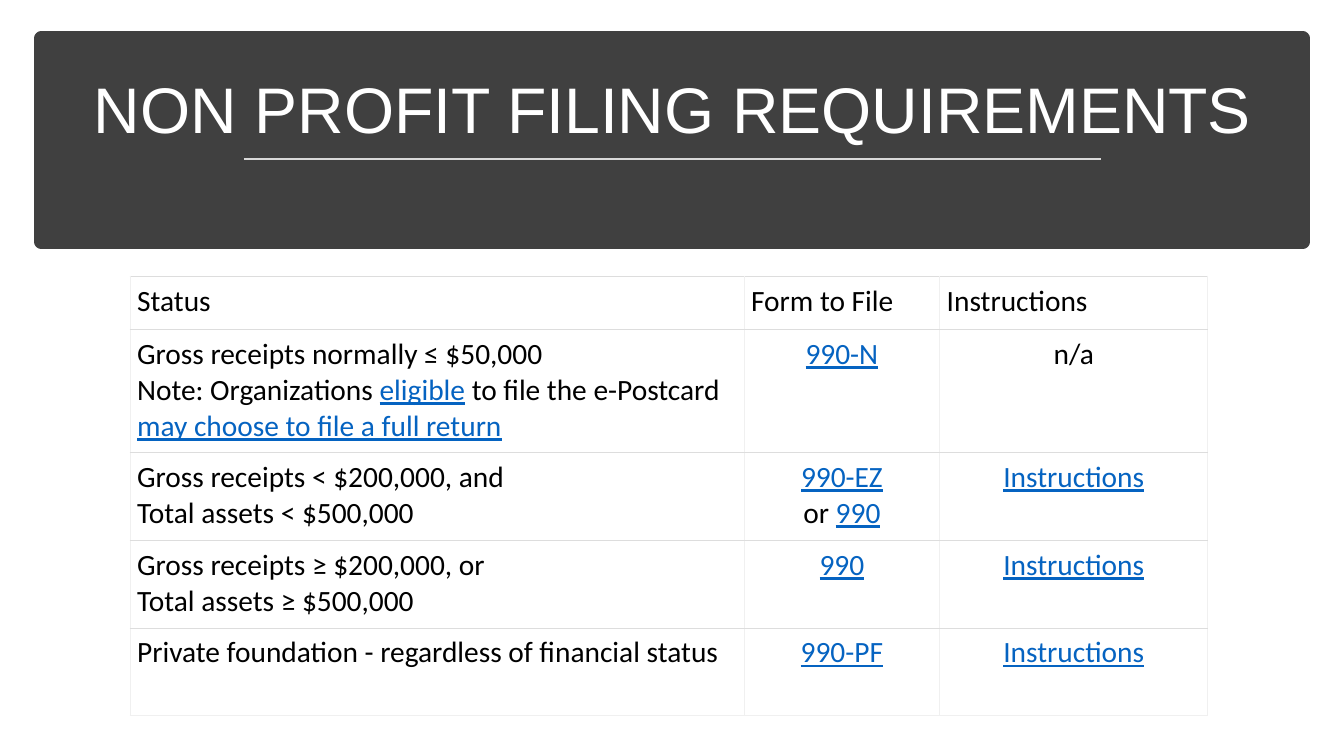
from lxml import etree
from pptx import Presentation
from pptx.dml.color import RGBColor
from pptx.enum import shapes, text
from pptx.oxml import ns
from pptx.util import Inches, Pt

CHARCOAL = RGBColor(0x40, 0x40, 0x40)
WHITE = RGBColor(0xFF, 0xFF, 0xFF)
BLACK = RGBColor(0, 0, 0)
RULE_GREY = RGBColor(0xD9, 0xD9, 0xD9)
LINK_BLUE = RGBColor(0x05, 0x63, 0xC1)
ROW_BORDER = RGBColor(0xDD, 0xDD, 0xDD)
SIDE_BORDER = RGBColor(0xF0, 0xF0, 0xF0)

COLUMN_WIDTHS = [6.09, 1.94, 2.66]
ROW_HEIGHTS = [0.53, 1.22, 0.87, 0.87, 0.87]
FILING_ROWS = [
    ["Status", "Form to File", "Instructions"],
    ["Gross receipts normally ≤ $50,000\vNote: Organizations |eligible| to file the e-Postcard |may choose to file a full return|",
     "|990-N|", "n/a"],
    ["Gross receipts < $200,000, and\vTotal assets < $500,000", "|990-EZ|\nor |990|", "|Instructions|"],
    ["Gross receipts ≥ $200,000, or\vTotal assets ≥ $500,000", "|990|", "|Instructions|"],
    ["Private foundation - regardless of financial status", "|990-PF|", "|Instructions|"],
]


def add_border(cell, side, color):
    border = etree.SubElement(cell._tc.get_or_add_tcPr(), ns.qn(f"a:{side}"), w=str(Pt(0.6)))
    fill = etree.SubElement(border, ns.qn("a:solidFill"))
    etree.SubElement(fill, ns.qn("a:srgbClr"), val=str(color))


def add_marked_text(paragraph, marked_text):
    for line_index, line in enumerate(marked_text.split("\v")):
        if line_index:
            paragraph.add_line_break()
        for part_index, part in enumerate(line.split("|")):
            if not part:
                continue
            is_link = part_index % 2 == 1
            run = paragraph.add_run()
            run.text = part
            run.font.name = "Calibri"
            run.font.size = Pt(21)
            run.font.underline = is_link
            run.font.color.rgb = LINK_BLUE if is_link else BLACK


presentation = Presentation()
presentation.slide_width = Inches(13.33)
presentation.slide_height = Inches(7.5)
slide = presentation.slides.add_slide(presentation.slide_layouts[0])
subtitle = slide.placeholders[1]
subtitle.element.getparent().remove(subtitle.element)

band = slide.shapes.add_shape(
    shapes.MSO_SHAPE.RECTANGLE, Inches(0.41), Inches(0.38), Inches(12.51), Inches(2.02))
band.shadow.inherit = False
band.fill.solid()
band.fill.fore_color.rgb = CHARCOAL
band.line.color.rgb = CHARCOAL
band.line.width = Pt(10)

title = slide.shapes.title
title.left, title.top = Inches(0.58), Inches(0.51)
title.width, title.height = Inches(12.18), Inches(1.02)
title.element.addprevious(band.element)
title_frame = title.text_frame
title_frame.auto_size = text.MSO_AUTO_SIZE.NONE
title_frame.word_wrap = True
title_frame.vertical_anchor = text.MSO_ANCHOR.BOTTOM
title_frame.margin_left = title_frame.margin_right = Inches(0.1)
title_frame.margin_top, title_frame.margin_bottom = Inches(0), Inches(0.07)
title_paragraph = title_frame.paragraphs[0]
title_paragraph.alignment = text.PP_ALIGN.CENTER
title_paragraph.line_spacing = 0.9
title_run = title_paragraph.add_run()
title_run.text = "NON PROFIT FILING REQUIREMENTS"
title_run.font.name = "Arial"
title_run.font.size = Pt(46)
title_run.font.color.rgb = WHITE

title_rule = slide.shapes.add_connector(
    shapes.MSO_CONNECTOR.STRAIGHT, Inches(2.42), Inches(1.58), Inches(10.92), Inches(1.58))
title_rule.line.color.rgb = RULE_GREY
title_rule.line.width = Pt(1.75)
etree.SubElement(title_rule.element.spPr, ns.qn("a:effectLst"))

table = slide.shapes.add_table(
    len(ROW_HEIGHTS), len(COLUMN_WIDTHS), Inches(1.29), Inches(2.74),
    Inches(sum(COLUMN_WIDTHS)), Inches(sum(ROW_HEIGHTS))).table
table.first_row = False
table.horz_banding = False
for column, width in zip(table.columns, COLUMN_WIDTHS):
    column.width = Inches(width)

for row_index, (height, row_texts) in enumerate(zip(ROW_HEIGHTS, FILING_ROWS)):
    table.rows[row_index].height = Inches(height)
    is_last_row = row_index == len(FILING_ROWS) - 1
    for column_index, cell_text in enumerate(row_texts):
        cell = table.cell(row_index, column_index)
        cell.margin_left = cell.margin_right = Inches(0.07)
        cell.margin_top = cell.margin_bottom = Inches(0.07)
        add_border(cell, "lnL", SIDE_BORDER)
        add_border(cell, "lnR", SIDE_BORDER)
        add_border(cell, "lnT", ROW_BORDER)
        add_border(cell, "lnB", SIDE_BORDER if is_last_row else ROW_BORDER)
        cell.fill.background()
        for paragraph_index, paragraph_text in enumerate(cell_text.split("\n")):
            frame = cell.text_frame
            paragraph = frame.add_paragraph() if paragraph_index else frame.paragraphs[0]
            if row_index and column_index:
                paragraph.alignment = text.PP_ALIGN.CENTER
            add_marked_text(paragraph, paragraph_text)

presentation.save("out.pptx")
